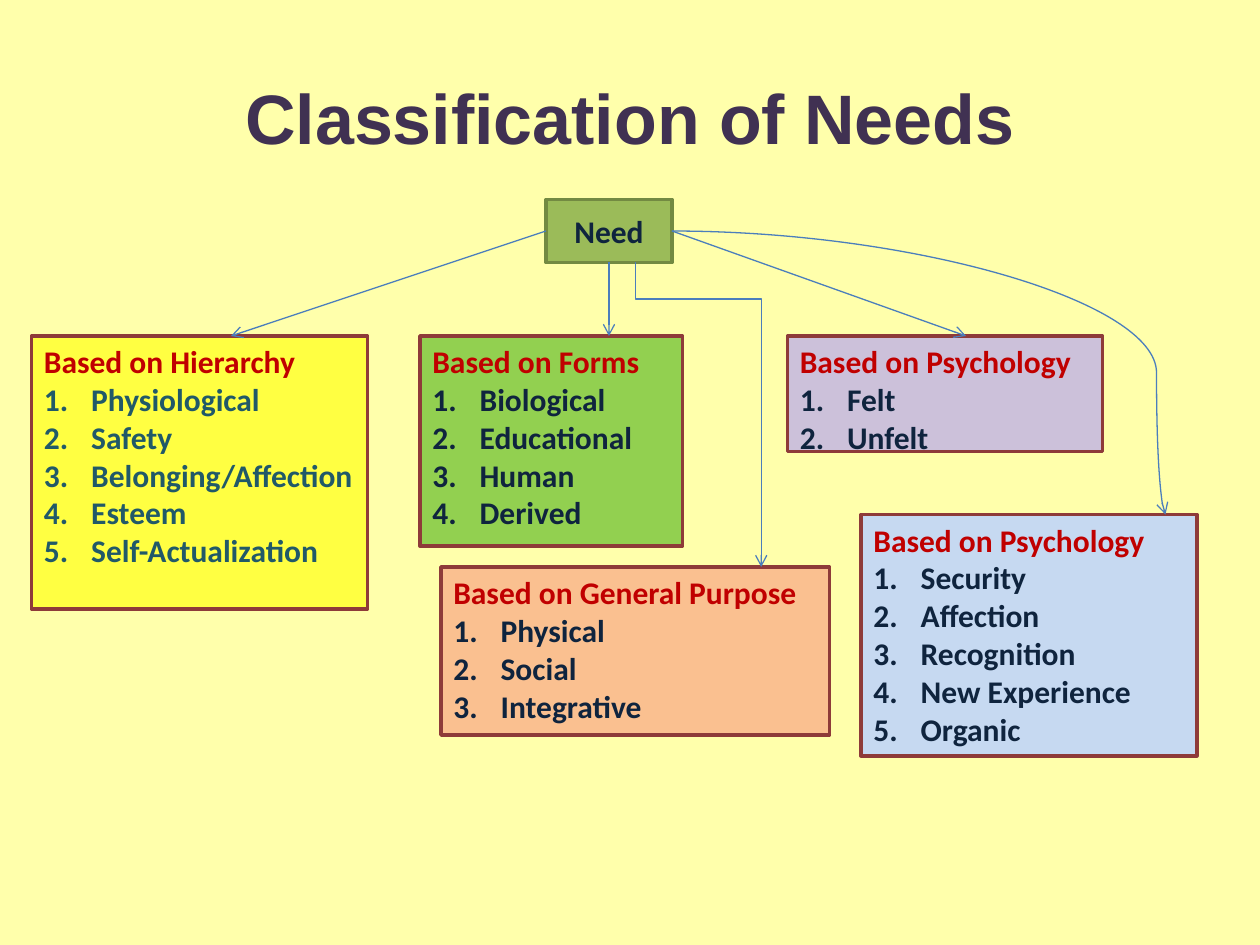
from dataclasses import dataclass

from lxml.etree import SubElement
from pptx import Presentation
from pptx.dml.color import RGBColor
from pptx.enum.shapes import MSO_CONNECTOR, MSO_SHAPE
from pptx.enum.text import MSO_ANCHOR, PP_ALIGN
from pptx.oxml.ns import qn
from pptx.util import Pt


@dataclass(frozen=True)
class Theme:
    yellow: str = "FFFF00"
    title: str = "403152"
    ink: str = "0F243E"
    teal: str = "215968"
    heading: str = "C00000"
    need: str = "9BBB59"
    need_edge: str = "738A42"
    group_edge: str = "8E3B39"
    arrow: str = "4B7EBC"
    title_font: str = "Arial"
    body_font: str = "Calibri"
    title_size: int = 40
    body_size: int = 18


theme = Theme()


def write(frame, text, color=theme.ink, font=theme.body_font, size=theme.body_size,
          align=PP_ALIGN.LEFT, numbered=False, first=True):
    paragraph = frame.paragraphs[0] if first else frame.add_paragraph()
    paragraph.alignment = align
    if numbered:
        properties = paragraph._p.get_or_add_pPr()
        properties.set("marL", str(Pt(27)))
        properties.set("indent", str(-Pt(27)))
        SubElement(properties, qn("a:buFont"), typeface="+mj-lt")
        SubElement(properties, qn("a:buAutoNum"), type="arabicPeriod")
    run = paragraph.add_run()
    run.text = text
    run.font.name = font
    run.font.size = Pt(size)
    run.font.bold = True
    run.font.color.rgb = RGBColor.from_string(color)


def paint(fill, color, opacity=100):
    fill.solid()
    fill.fore_color.rgb = RGBColor.from_string(color)
    if opacity < 100:
        # The colour element sits at the end of the fill's XML
        tint = fill._xPr.find(".//" + qn("a:srgbClr"))
        SubElement(tint, qn("a:alpha"), val=str(opacity * 1000))


deck = Presentation()
deck.slide_width, deck.slide_height = Pt(720), Pt(540)
slide = deck.slides.add_slide(deck.slide_layouts[6])
paint(slide.background.fill, theme.yellow, opacity=33)

# Title
title = slide.shapes.add_textbox(Pt(36), Pt(21.6), Pt(648), Pt(90)).text_frame
title.word_wrap = True
title.vertical_anchor = MSO_ANCHOR.MIDDLE
write(title, "Classification of Needs", color=theme.title, font=theme.title_font,
      size=theme.title_size, align=PP_ALIGN.CENTER)

# Need and its groups: place, fill, opacity, edge, item colour, heading, items
boxes = [
    ((312, 114, 72, 36), theme.need, 100, theme.need_edge, theme.ink, "Need", []),
    ((18, 192, 192, 156), theme.yellow, 61, theme.group_edge, theme.teal,
     "Based on Hierarchy",
     ["Physiological", "Safety", "Belonging/Affection", "Esteem", "Self-Actualization"]),
    ((240, 192, 150, 120), "92D050", 100, theme.group_edge, theme.ink,
     "Based on Forms", ["Biological", "Educational", "Human", "Derived"]),
    ((252, 324, 222, 96), "FAC090", 100, theme.group_edge, theme.ink,
     "Based on General Purpose", ["Physical", "Social", "Integrative"]),
    ((450, 192, 180, 66), "CCC1DA", 100, theme.group_edge, theme.ink,
     "Based on Psychology", ["Felt", "Unfelt"]),
    ((492, 294, 192, 138), "C6D9F1", 100, theme.group_edge, theme.ink,
     "Based on Psychology",
     ["Security", "Affection", "Recognition", "New Experience", "Organic"]),
]
drawn = []
for place, fill, opacity, edge, item_color, heading, items in boxes:
    box = slide.shapes.add_shape(MSO_SHAPE.RECTANGLE, *map(Pt, place))
    box.shadow.inherit = False
    paint(box.fill, fill, opacity)
    box.line.color.rgb = RGBColor.from_string(edge)
    box.line.width = Pt(2)
    frame = box.text_frame
    frame.word_wrap = True
    frame.vertical_anchor = MSO_ANCHOR.TOP if items else MSO_ANCHOR.MIDDLE
    write(frame, heading, color=theme.heading if items else theme.ink,
          align=PP_ALIGN.LEFT if items else PP_ALIGN.CENTER)
    for item in items:
        write(frame, item, color=item_color, numbered=True, first=False)
    drawn.append(box)
need = drawn[0]

# Arrows: kind, start, end, side of Need joined, bend, rotation in degrees
# The bent arrow is laid out sideways, then turned about its centre
arrows = [
    (MSO_CONNECTOR.STRAIGHT, (312, 132), (132, 192), 1, None, 0),
    (MSO_CONNECTOR.STRAIGHT, (348, 150), (348, 192), 2, None, 0),
    (MSO_CONNECTOR.STRAIGHT, (384, 132), (552, 192), 3, None, 0),
    (MSO_CONNECTOR.ELBOW, (486, 201), (312, 273), None, 12000, 270),
    (MSO_CONNECTOR.CURVE, (384, 132), (666, 294), None, 98200, 0),
]
for kind, start, end, side, bend, rotation in arrows:
    arrow = slide.shapes.add_connector(kind, *map(Pt, start + end))
    if side is not None:
        arrow.begin_connect(need, side)
    arrow.line.color.rgb = RGBColor.from_string(theme.arrow)
    arrow.line.width = Pt(0.75)
    properties = arrow._element.spPr
    SubElement(arrow.line._get_or_add_ln(), qn("a:tailEnd"), type="arrow")
    SubElement(properties, qn("a:effectLst"))
    if bend is not None:
        SubElement(properties.find(".//" + qn("a:avLst")), qn("a:gd"),
                   name="adj1", fmla=f"val {bend}")
    if rotation:
        properties.find(qn("a:xfrm")).set("rot", str(rotation * 60000))

deck.save("out.pptx")
